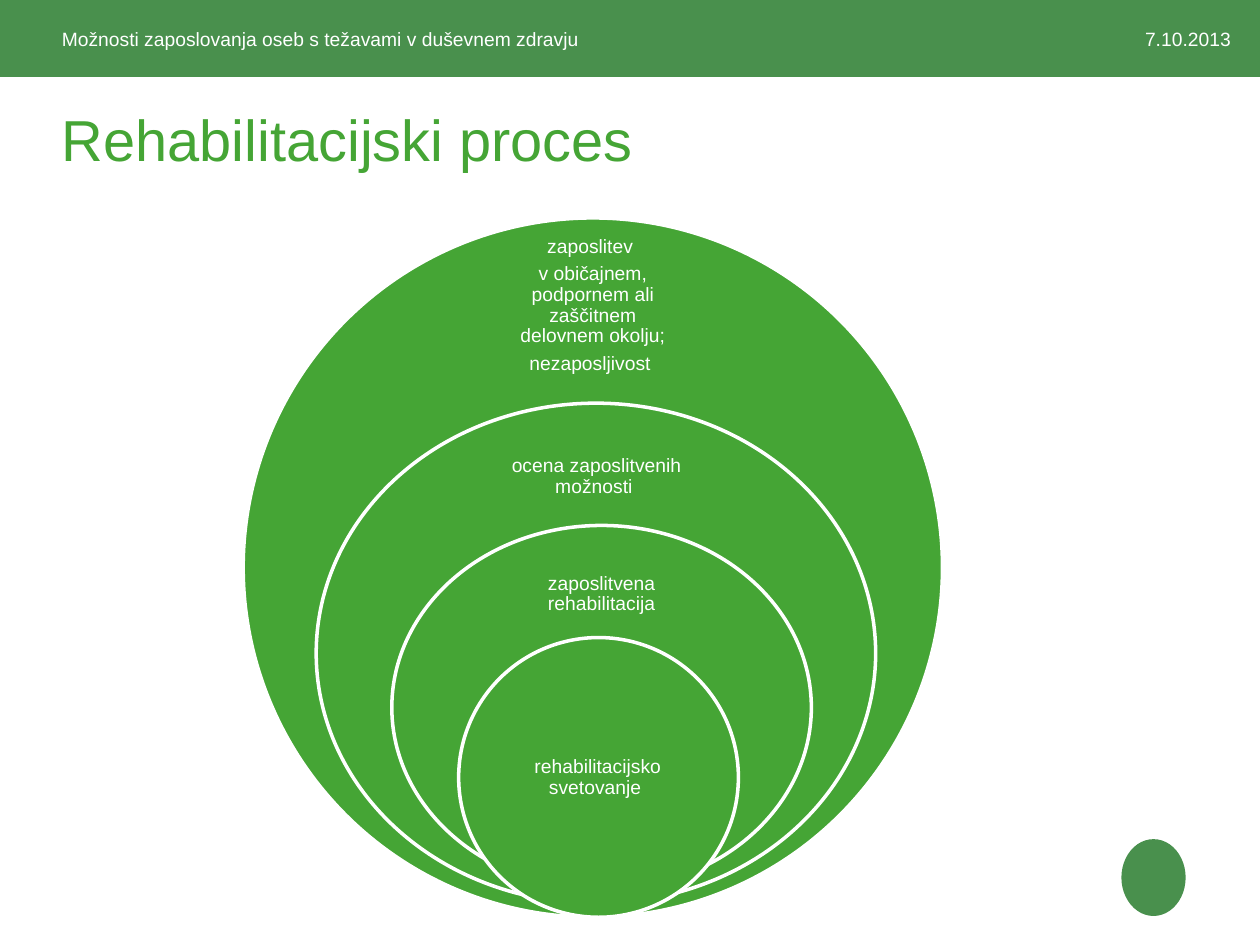
from pptx import Presentation
from pptx.dml.color import RGBColor
from pptx.enum.shapes import MSO_SHAPE
from pptx.enum.text import MSO_ANCHOR, MSO_AUTO_SIZE, PP_ALIGN
from pptx.util import Inches, Pt

RECTANGLE, ELLIPSE = MSO_SHAPE.RECTANGLE, MSO_SHAPE.OVAL
TOP, MIDDLE = MSO_ANCHOR.TOP, MSO_ANCHOR.MIDDLE
LEFT, CENTER, RIGHT = PP_ALIGN.LEFT, PP_ALIGN.CENTER, PP_ALIGN.RIGHT

BAND_GREEN = RGBColor(0x49, 0x90, 0x4D)
GREEN = RGBColor(0x45, 0xA5, 0x35)
WHITE = RGBColor(0xFF, 0xFF, 0xFF)
FONT = "Arial"
BODY_SIZE = 11

TITLE = "Rehabilitacijski proces"
# text, box, alignment
HEADER = [
    ("7.10.2013", (7.44, 0.22, 2.33, 0.3), RIGHT),
    ("Možnosti zaposlovanja oseb s težavami v duševnem zdravju",
     (0.49, 0.22, 4.51, 0.24), LEFT),
]
# paragraphs, ellipse box, label box; outermost stage first
STAGES = [
    (["zaposlitev ",
      "v običajnem, podpornem ali zaščitnem delovnem okolju;",
      "nezaposljivost "],
     (1.93, 1.73, 5.55, 5.55), (3.93, 2.01, 1.55, 0.83)),
    (["ocena zaposlitvenih možnosti "],
     (2.51, 3.2, 4.44, 3.97), (3.96, 3.43, 1.55, 0.71)),
    (["zaposlitvena rehabilitacija"],
     (3.11, 4.17, 3.33, 2.89), (4, 4.39, 1.55, 0.65)),
    (["rehabilitacijsko svetovanje "],
     (3.64, 5.06, 2.22, 2.22), (3.96, 5.62, 1.57, 1.11)),
]


def inches(box):
    return [Inches(length) for length in box]


def add_filled(slide, preset, box, fill, outline=None):
    shape = slide.shapes.add_shape(preset, *inches(box))
    shape.shadow.inherit = False
    shape.fill.solid()
    shape.fill.fore_color.rgb = fill
    if outline is None:
        shape.line.fill.background()
    else:
        shape.line.color.rgb = outline
        shape.line.width = Pt(2)


def set_text(shape, paragraphs, size, color, align, anchor=TOP, inset=0):
    frame = shape.text_frame
    frame.text = "\n".join(paragraphs)
    frame.word_wrap = True
    frame.auto_size = MSO_AUTO_SIZE.NONE
    frame.vertical_anchor = anchor
    frame.margin_left = frame.margin_right = Inches(inset)
    frame.margin_top = frame.margin_bottom = Inches(inset)
    for paragraph in frame.paragraphs:
        paragraph.alignment = align
        for run in paragraph.runs:
            run.font.name = FONT
            run.font.size = Pt(size)
            run.font.color.rgb = color


def add_stage(slide, paragraphs, ellipse_box, label_box):
    add_filled(slide, ELLIPSE, ellipse_box, GREEN, WHITE)
    label = slide.shapes.add_textbox(*inches(label_box))
    set_text(label, paragraphs, BODY_SIZE, WHITE, CENTER, MIDDLE, 0.09)
    for paragraph in label.text_frame.paragraphs:
        paragraph.line_spacing = 0.9
        paragraph.space_after = Pt(0.35 * BODY_SIZE)


def main():
    prs = Presentation()
    prs.slide_width, prs.slide_height = Inches(10), Inches(7.5)
    slide = prs.slides.add_slide(prs.slide_layouts[5])

    add_filled(slide, RECTANGLE, (0, -0.01, 10, 0.62), BAND_GREEN)
    # Plain emblem in the bottom right corner
    add_filled(slide, ELLIPSE, (8.9, 6.66, 0.51, 0.61), BAND_GREEN)

    title = slide.shapes.title
    title.left, title.top, title.width, title.height = inches((0.49, 0.82, 9.26, 0.71))
    set_text(title, [TITLE], 33, GREEN, LEFT)

    for stage in STAGES:
        add_stage(slide, *stage)
    for text, box, align in HEADER:
        header = slide.shapes.add_textbox(*inches(box))
        set_text(header, [text], BODY_SIZE, WHITE, align)

    prs.save("out.pptx")


if __name__ == "__main__":
    main()
